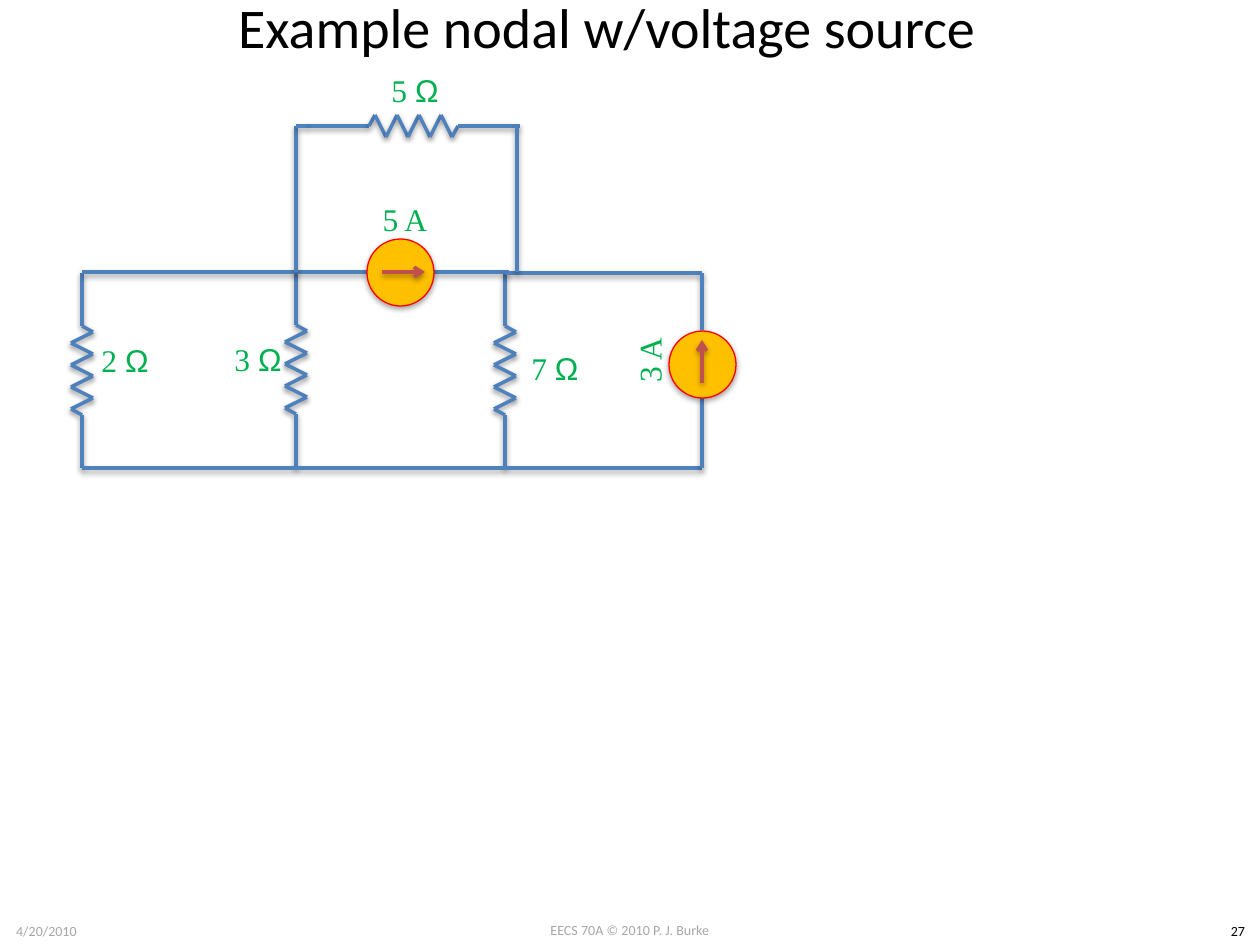
from dataclasses import dataclass
from itertools import pairwise

import pptx
import pptx.dml.color
import pptx.enum.shapes
import pptx.enum.text
import pptx.oxml
import pptx.oxml.ns
import pptx.util

RGBColor = pptx.dml.color.RGBColor
PP_ALIGN = pptx.enum.text.PP_ALIGN
ANCHOR = pptx.enum.text.MSO_ANCHOR
PX = 914400 / 126

BLACK = RGBColor(0x00, 0x00, 0x00)
GRAY = RGBColor(0xA6, 0xA6, 0xA6)
WIRE = RGBColor(0x4F, 0x81, 0xBD)
ARROW = RGBColor(0xC0, 0x50, 0x4D)
AMBER = RGBColor(0xFF, 0xC0, 0x00)
RED = RGBColor(0xFF, 0x00, 0x00)
GREEN = RGBColor(0x00, 0xB0, 0x50)

LABEL_W, LABEL_H = 150, 92
SOURCE_D = 67
ARROW_LEN = 43
SWING = 11          # half width of the zigzag, and the step between its peaks
ZIGZAG_LEN = 89


@dataclass
class Resistor:
    x: int
    y: int
    lead_in: int
    lead_out: int
    vertical: bool = True


@dataclass
class Source:
    cx: int
    cy: int
    arrow: tuple[int, int, int, int]


@dataclass
class Label:
    x: int
    y: int
    value: str
    unit: str
    rotation: int = 0


@dataclass
class Note:
    x: int
    y: int
    w: int
    h: int
    text: str
    size: int
    color: RGBColor
    wrap: bool = False
    anchor: ANCHOR = ANCHOR.TOP


RESISTORS = [
    Resistor(82, 273, 53, 53),
    Resistor(296, 272, 53, 54),
    Resistor(505, 273, 53, 53),
    Resistor(307, 126, 62, 62, vertical=False),
]

WIRES = [
    (82, 468, 702, 468),    # bottom rail
    (82, 272, 367, 272),    # left rail to the 5 A source
    (433, 272, 509, 272),
    (505, 273, 702, 273),   # right rail
    (517, 272, 517, 126),   # upper loop
    (296, 272, 296, 126),
    (296, 126, 307, 126),
    (702, 330, 702, 273),   # 3 A branch
    (702, 397, 702, 468),
]

SOURCES = [
    Source(702, 364, (702, 383, 702, 383 - ARROW_LEN)),
    Source(400, 272, (382, 272, 382 + ARROW_LEN, 272)),
]

LABELS = [
    Label(50, 314, "2 ", "Ω"),
    Label(183, 313, "3 ", "Ω"),
    Label(480, 322, "7 ", "Ω"),
    Label(340, 44, "5 ", "Ω"),
    Label(330, 173, "5 ", "A"),
    Label(574, 314, "3 ", "A", rotation=270),
]

NOTES = [
    Note(40, -38, 1134, 129, "Example nodal w/voltage source", 32, BLACK,
         wrap=True, anchor=ANCHOR.MIDDLE),
    Note(483, 915, 294, 30, "EECS 70A © 2010 P. J. Burke", 8, GRAY),
    Note(0, 916, 93, 30, "4/20/2010", 8, GRAY),
    Note(1216, 916, 44, 30, "27", 8, BLACK),
]


def emu(*lengths: int) -> list[pptx.util.Emu]:
    return [pptx.util.Emu(round(n * PX)) for n in lengths]


def add_shadow(sp, alpha: int) -> None:
    sp._element.spPr.append(pptx.oxml.parse_xml(
        f'<a:effectLst {pptx.oxml.ns.nsdecls("a")}>'
        '<a:outerShdw blurRad="40000" dist="20000" dir="5400000" rotWithShape="0">'
        f'<a:srgbClr val="000000"><a:alpha val="{alpha * 1000}"/></a:srgbClr>'
        '</a:outerShdw></a:effectLst>'))


def add_line(s, x1: int, y1: int, x2: int, y2: int,
             color: RGBColor = WIRE, arrow: bool = False) -> None:
    sp = s.shapes.add_connector(
        pptx.enum.shapes.MSO_CONNECTOR.STRAIGHT, *emu(x1, y1, x2, y2))
    sp.line.color.rgb = color
    sp.line.width = pptx.util.Pt(2)
    if arrow:
        sp.line._get_or_add_ln().append(pptx.oxml.parse_xml(
            f'<a:tailEnd {pptx.oxml.ns.nsdecls("a")} type="arrow"/>'))
    add_shadow(sp, 38)


def add_resistor(s, res: Resistor) -> None:
    # Points as (distance along the wire, offset across it)
    end = res.lead_in + ZIGZAG_LEN
    peaks = [(res.lead_in + 6 + SWING * i, SWING * (-1) ** i) for i in range(8)]
    points = [(0, 0), (res.lead_in, 0), *peaks, (end, 0), (end + res.lead_out, 0)]
    if res.vertical:
        track = [(res.x + off, res.y + along) for along, off in points]
    else:
        track = [(res.x + along, res.y - off) for along, off in points]
    for start, stop in pairwise(track):
        add_line(s, *start, *stop)


def add_source(s, src: Source) -> None:
    r = SOURCE_D // 2
    sp = s.shapes.add_shape(pptx.enum.shapes.MSO_SHAPE.OVAL,
                            *emu(src.cx - r, src.cy - r, SOURCE_D, SOURCE_D))
    sp.fill.solid()
    sp.fill.fore_color.rgb = AMBER
    sp.line.color.rgb = RED
    sp.line.width = pptx.util.Pt(0.75)
    add_shadow(sp, 35)
    add_line(s, *src.arrow, color=ARROW, arrow=True)


def add_label(s, label: Label) -> None:
    sp = s.shapes.add_textbox(*emu(label.x, label.y, LABEL_W, LABEL_H))
    sp.rotation = label.rotation
    tf = sp.text_frame
    tf.word_wrap = True
    tf.vertical_anchor = ANCHOR.MIDDLE
    p = tf.paragraphs[0]
    p.alignment = PP_ALIGN.CENTER
    p.font.size = pptx.util.Pt(18)
    p.font.color.rgb = GREEN
    unit_font = "Arial" if label.unit == "Ω" else "Times New Roman"
    for text, font in ((label.value, "Times New Roman"), (label.unit, unit_font)):
        r = p.add_run()
        r.text = text
        r.font.name = font


def add_note(s, note: Note) -> None:
    tf = s.shapes.add_textbox(*emu(note.x, note.y, note.w, note.h)).text_frame
    tf.word_wrap = note.wrap
    tf.vertical_anchor = note.anchor
    p = tf.paragraphs[0]
    p.text = note.text
    p.alignment = PP_ALIGN.CENTER
    p.font.name = "Calibri"
    p.font.size = pptx.util.Pt(note.size)
    p.font.color.rgb = note.color


def main() -> None:
    prs = pptx.Presentation()
    prs.slide_width, prs.slide_height = emu(1260, 945)
    s = prs.slides.add_slide(prs.slide_layouts[6])

    # Title and footer
    for note in NOTES:
        add_note(s, note)
    # Circuit
    for res in RESISTORS:
        add_resistor(s, res)
    for wire in WIRES:
        add_line(s, *wire)
    for src in SOURCES:
        add_source(s, src)
    for label in LABELS:
        add_label(s, label)

    prs.save("out.pptx")


if __name__ == "__main__":
    main()
